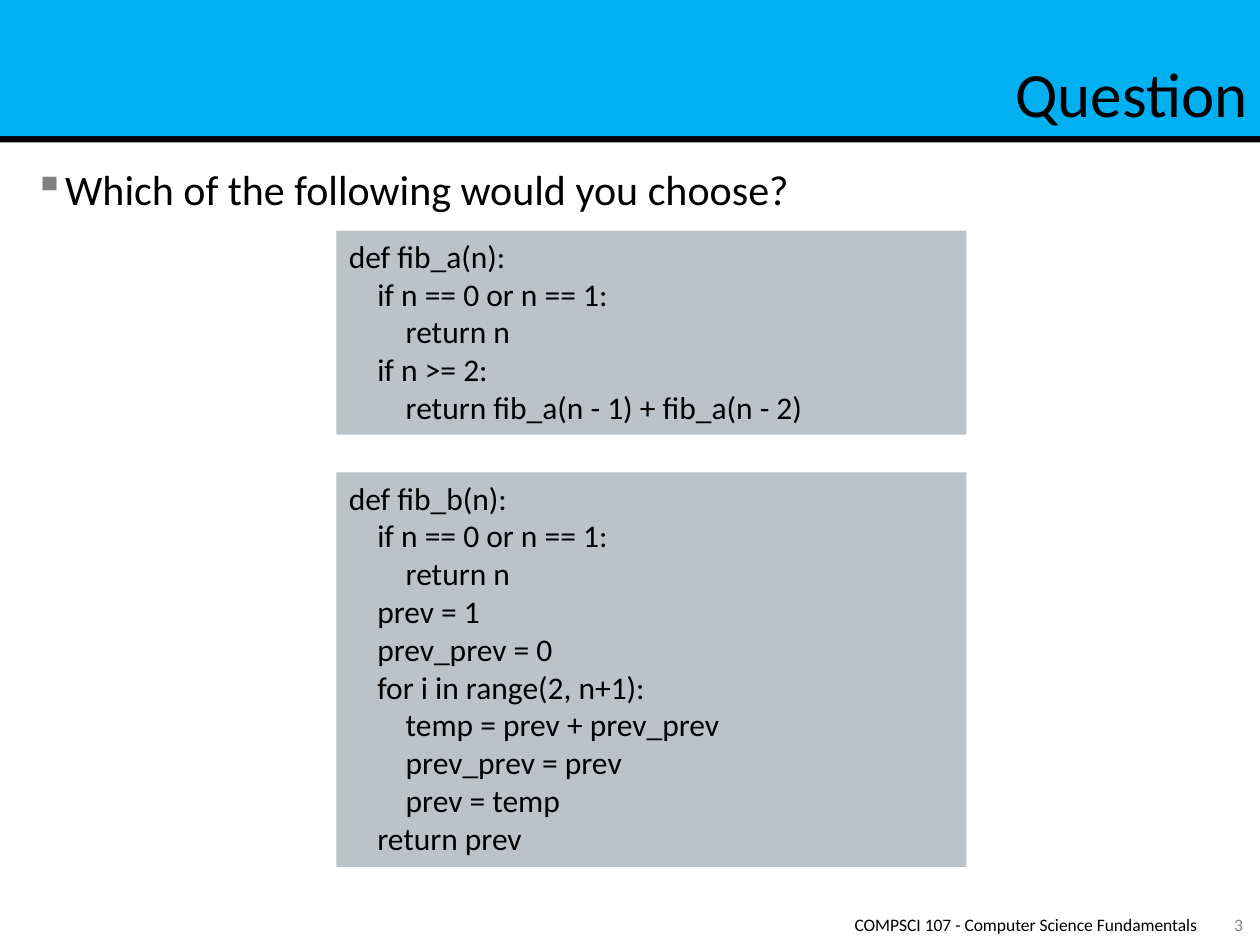
import pptx
import pptx.dml.color
import pptx.enum.shapes
import pptx.enum.text
import pptx.oxml.ns
import pptx.util
from lxml import etree
from pptx.util import Inches

ALIGN = pptx.enum.text.PP_ALIGN
ANCHOR = pptx.enum.text.MSO_ANCHOR
BLACK, GRAY, BLUE, CODE_FILL = "000000", "808080", "00B0F0", "BBC3C9"
CODE_INDENT = 0.226  # inches for each nesting level

# Each code line is a nesting level and its text
RECURSIVE_CODE = [
    (0, "def fib_a(n):"),
    (1, "if n == 0 or n == 1:"),
    (2, "return n"),
    (1, "if n >= 2:"),
    (2, "return fib_a(n - 1) + fib_a(n - 2)"),
]
ITERATIVE_CODE = [
    (0, "def fib_b(n):"),
    (1, "if n == 0 or n == 1:"),
    (2, "return n"),
    (1, "prev = 1"),
    (1, "prev_prev = 0"),
    (1, "for i in range(2, n+1):"),
    (2, "temp = prev + prev_prev"),
    (2, "prev_prev = prev"),
    (2, "prev = temp"),
    (1, "return prev"),
]


def color(hex_value):
    return pptx.dml.color.RGBColor.from_string(hex_value)


def add_rectangle(slide, left, top, width, height, fill):
    shape = slide.shapes.add_shape(
        pptx.enum.shapes.MSO_SHAPE.RECTANGLE,
        Inches(left), Inches(top), Inches(width), Inches(height))
    shape.shadow.inherit = False
    shape.fill.solid()
    shape.fill.fore_color.rgb = color(fill)
    shape.line.fill.background()
    return shape


def add_text_box(slide, left, top, width, height, anchor=ANCHOR.TOP):
    box = slide.shapes.add_textbox(
        Inches(left), Inches(top), Inches(width), Inches(height))
    box.text_frame.word_wrap = True
    box.text_frame.vertical_anchor = anchor
    return box


def write(paragraph, text, size, font_color=BLACK, align=ALIGN.LEFT):
    paragraph.alignment = align
    run = paragraph.add_run()
    run.text = text
    run.font.name = "Calibri"
    run.font.size = pptx.util.Pt(size)
    run.font.color.rgb = color(font_color)


def set_indent(paragraph, margin, first_line=0):
    properties = paragraph._p.get_or_add_pPr()
    properties.set("marL", str(Inches(margin)))
    properties.set("indent", str(Inches(first_line)))
    return properties


def add_bullet(paragraph, character, bullet_color):
    properties = set_indent(paragraph, 0.2, -0.2)
    qn = pptx.oxml.ns.qn
    bullet = etree.SubElement(properties, qn("a:buClr"))
    etree.SubElement(bullet, qn("a:srgbClr"), val=bullet_color)
    etree.SubElement(properties, qn("a:buChar"), char=character)


def add_code_block(slide, top, height, lines):
    shape = add_rectangle(slide, 2.67, top, 5, height, CODE_FILL)
    frame = shape.text_frame
    frame.word_wrap = True
    frame.vertical_anchor = ANCHOR.TOP
    frame.auto_size = pptx.enum.text.MSO_AUTO_SIZE.SHAPE_TO_FIT_TEXT
    for index, (level, text) in enumerate(lines):
        paragraph = frame.add_paragraph() if index else frame.paragraphs[0]
        write(paragraph, text, 18)
        set_indent(paragraph, level * CODE_INDENT)


def add_header(slide):
    add_rectangle(slide, 0, 1.08, 10, 0.05, BLACK)
    title = add_rectangle(slide, 0, 0, 10, 1.08, BLUE)
    title.text_frame.vertical_anchor = ANCHOR.BOTTOM
    write(title.text_frame.paragraphs[0], "Question", 36, align=ALIGN.RIGHT)


def add_question(slide):
    body = add_text_box(slide, 0.17, 1.25, 9.67, 5.92)
    paragraph = body.text_frame.paragraphs[0]
    write(paragraph, "Which of the following would you choose?", 24)
    paragraph.space_before = pptx.util.Pt(4.8)
    add_bullet(paragraph, "▪", GRAY)


def add_footer(slide):
    number = add_text_box(slide, 9.58, 7.25, 0.5, 0.17, ANCHOR.MIDDLE)
    write(number.text_frame.paragraphs[0], "3", 10, GRAY, ALIGN.CENTER)
    course = add_text_box(slide, 4.83, 7.25, 4.67, 0.17, ANCHOR.MIDDLE)
    frame = course.text_frame
    frame.margin_left = frame.margin_right = 0
    frame.margin_top = frame.margin_bottom = 0
    write(frame.paragraphs[0], "COMPSCI 107 - Computer Science Fundamentals",
          10, align=ALIGN.RIGHT)


def main():
    presentation = pptx.Presentation()
    presentation.slide_width = Inches(10)
    presentation.slide_height = Inches(7.5)
    slide = presentation.slides.add_slide(presentation.slide_layouts[6])

    # Title band and question
    add_header(slide)
    add_question(slide)

    # The two candidate functions
    add_code_block(slide, 1.83, 1.62, RECURSIVE_CODE)
    add_code_block(slide, 3.75, 3.13, ITERATIVE_CODE)

    # Slide number and course name
    add_footer(slide)
    presentation.save("out.pptx")


if __name__ == "__main__":
    main()
